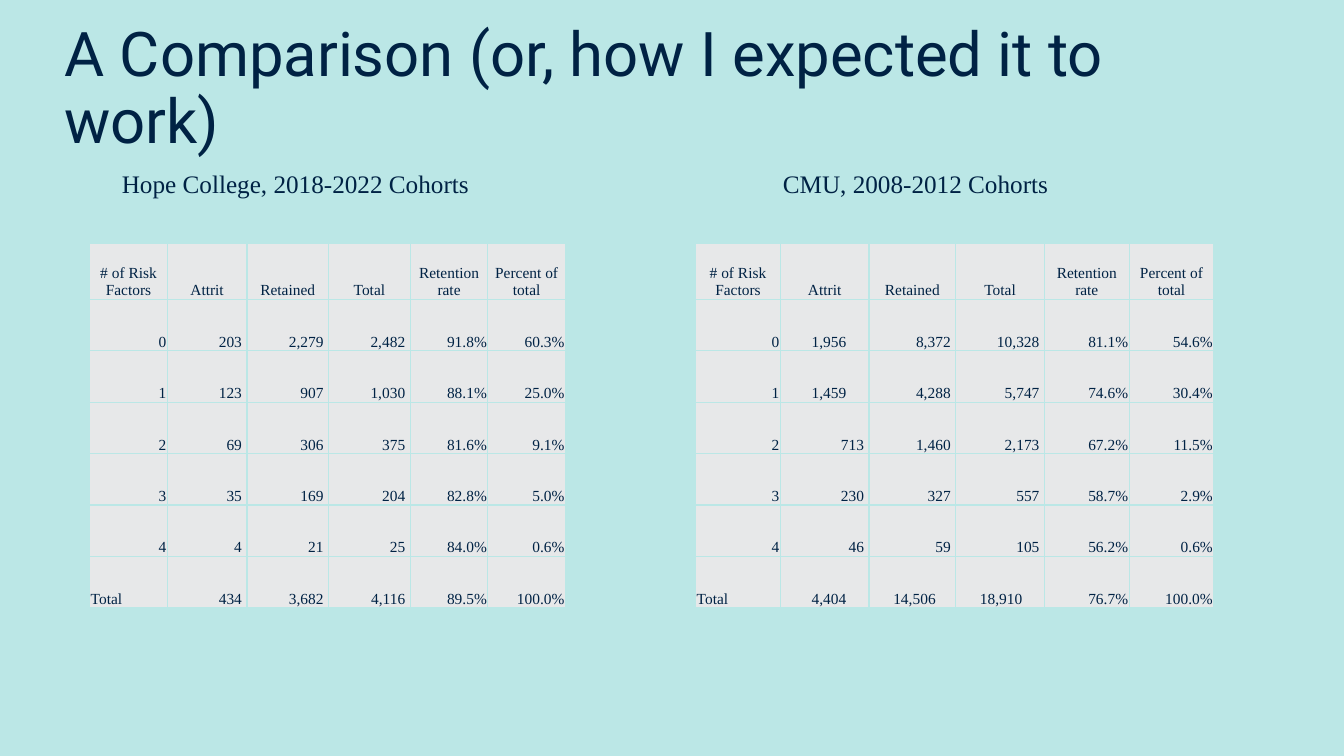
from dataclasses import dataclass

from lxml import etree
from pptx import Presentation
from pptx.dml.color import RGBColor
from pptx.enum.text import MSO_ANCHOR, MSO_AUTO_SIZE, PP_ALIGN
from pptx.oxml.ns import qn
from pptx.util import Inches, Pt

LEFT, CENTER, RIGHT = PP_ALIGN.LEFT, PP_ALIGN.CENTER, PP_ALIGN.RIGHT
MIDDLE, BOTTOM = MSO_ANCHOR.MIDDLE, MSO_ANCHOR.BOTTOM
GROW, NO_AUTOFIT = MSO_AUTO_SIZE.SHAPE_TO_FIT_TEXT, MSO_AUTO_SIZE.NONE
TITLE_ONLY = 5


@dataclass(frozen=True)
class Theme:
    background: str = "BBE7E6"
    ink: str = "002244"
    cell: str = "E7E8E9"
    title_font: str = "Roboto"
    body_font: str = "Times New Roman"
    title_size: int = 44
    heading_size: int = 18
    table_size: int = 11
    border: int = 1


THEME = Theme()


def style(paragraph, font_name, size, align):
    paragraph.alignment = align
    paragraph.font.name = font_name
    paragraph.font.size = Pt(size)
    paragraph.font.color.rgb = RGBColor.from_string(THEME.ink)


def add_borders(cell):
    """Draw all four cell sides; they must precede the fill in the XML."""
    properties = cell._tc.get_or_add_tcPr()
    for position, side in enumerate(("a:lnL", "a:lnR", "a:lnT", "a:lnB")):
        line = etree.Element(qn(side), w=str(Pt(THEME.border)))
        fill = etree.SubElement(line, qn("a:solidFill"))
        etree.SubElement(fill, qn("a:srgbClr"), val=THEME.background)
        properties.insert(position, line)


HEADER = ["# of Risk Factors", "Attrit", "Retained", "Total",
          "Retention rate", "Percent of total"]
COUNT_COLUMNS = (1, 2, 3)
CELL_INSET, COUNT_INSET = 0.01, 0.05
ROW_HEIGHTS = [0.56] + [0.51] * 6

# left_insets holds the counts that are set from the left: (row, column) -> inset
COHORTS = [
    dict(
        heading="Hope College, 2018-2022 Cohorts",
        heading_left=0.97, heading_width=3.92,
        table_left=0.89,
        widths=[0.77, 0.79, 0.81, 0.81, 0.77, 0.77],
        left_insets={},
        rows=[
            ["0", "203", "2,279", "2,482", "91.8%", "60.3%"],
            ["1", "123", "907", "1,030", "88.1%", "25.0%"],
            ["2", "69", "306", "375", "81.6%", "9.1%"],
            ["3", "35", "169", "204", "82.8%", "5.0%"],
            ["4", "4", "21", "25", "84.0%", "0.6%"],
            ["Total", "434", "3,682", "4,116", "89.5%", "100.0%"],
        ],
    ),
    dict(
        heading="CMU, 2008-2012 Cohorts",
        heading_left=6.12, heading_width=5.92,
        table_left=6.9,
        widths=[0.84, 0.88, 0.86, 0.88, 0.84, 0.84],
        left_insets={(1, 1): 0.31, (2, 1): 0.31, (6, 1): 0.31,
                     (6, 2): 0.24, (6, 3): 0.24},
        rows=[
            ["0", "1,956", "8,372", "10,328", "81.1%", "54.6%"],
            ["1", "1,459", "4,288", "5,747", "74.6%", "30.4%"],
            ["2", "713", "1,460", "2,173", "67.2%", "11.5%"],
            ["3", "230", "327", "557", "58.7%", "2.9%"],
            ["4", "46", "59", "105", "56.2%", "0.6%"],
            ["Total", "4,404", "14,506", "18,910", "76.7%", "100.0%"],
        ],
    ),
]

prs = Presentation()
prs.slide_width, prs.slide_height = Inches(13.33), Inches(7.5)
slide = prs.slides.add_slide(prs.slide_layouts[TITLE_ONLY])
slide.background.fill.solid()
slide.background.fill.fore_color.rgb = RGBColor.from_string(THEME.background)

title = slide.shapes.title
title.left, title.top = Inches(0.54), Inches(0.17)
title.width, title.height = Inches(11.5), Inches(1.45)
title.text_frame.text = "A Comparison (or, how I expected it to work)"
title.text_frame.word_wrap = True
title.text_frame.auto_size = NO_AUTOFIT
title.text_frame.vertical_anchor = MIDDLE
title_line = title.text_frame.paragraphs[0]
title_line.line_spacing = 0.9
style(title_line, THEME.title_font, THEME.title_size, LEFT)

for cohort in COHORTS:
    rows = [HEADER] + cohort["rows"]
    widths = cohort["widths"]
    table = slide.shapes.add_table(
        len(rows), len(HEADER), Inches(cohort["table_left"]), Inches(2.41),
        Inches(sum(widths)), Inches(sum(ROW_HEIGHTS))).table
    table.first_row = table.horz_banding = False
    for column, width in zip(table.columns, widths):
        column.width = Inches(width)
    for row, height in zip(table.rows, ROW_HEIGHTS):
        row.height = Inches(height)

    for r, values in enumerate(rows):
        for c, value in enumerate(values):
            cell = table.cell(r, c)
            left_inset = right_inset = CELL_INSET
            if r == 0:
                align = CENTER
            elif (r, c) in cohort["left_insets"]:
                align = LEFT
                left_inset = cohort["left_insets"][r, c]
            elif value == "Total":
                align = LEFT
            else:
                align = RIGHT
                if c in COUNT_COLUMNS:
                    right_inset = COUNT_INSET
            cell.text = value
            cell.vertical_anchor = BOTTOM
            cell.margin_left, cell.margin_right = Inches(left_inset), Inches(right_inset)
            cell.margin_top, cell.margin_bottom = Inches(CELL_INSET), 0
            cell.fill.solid()
            cell.fill.fore_color.rgb = RGBColor.from_string(THEME.cell)
            style(cell.text_frame.paragraphs[0], THEME.body_font, THEME.table_size, align)
            add_borders(cell)

for cohort in COHORTS:
    heading = slide.shapes.add_textbox(
        Inches(cohort["heading_left"]), Inches(1.62),
        Inches(cohort["heading_width"]), Inches(0.4)).text_frame
    heading.word_wrap = True
    heading.auto_size = GROW
    heading.text = cohort["heading"]
    style(heading.paragraphs[0], THEME.body_font, THEME.heading_size, CENTER)

prs.save("out.pptx")
